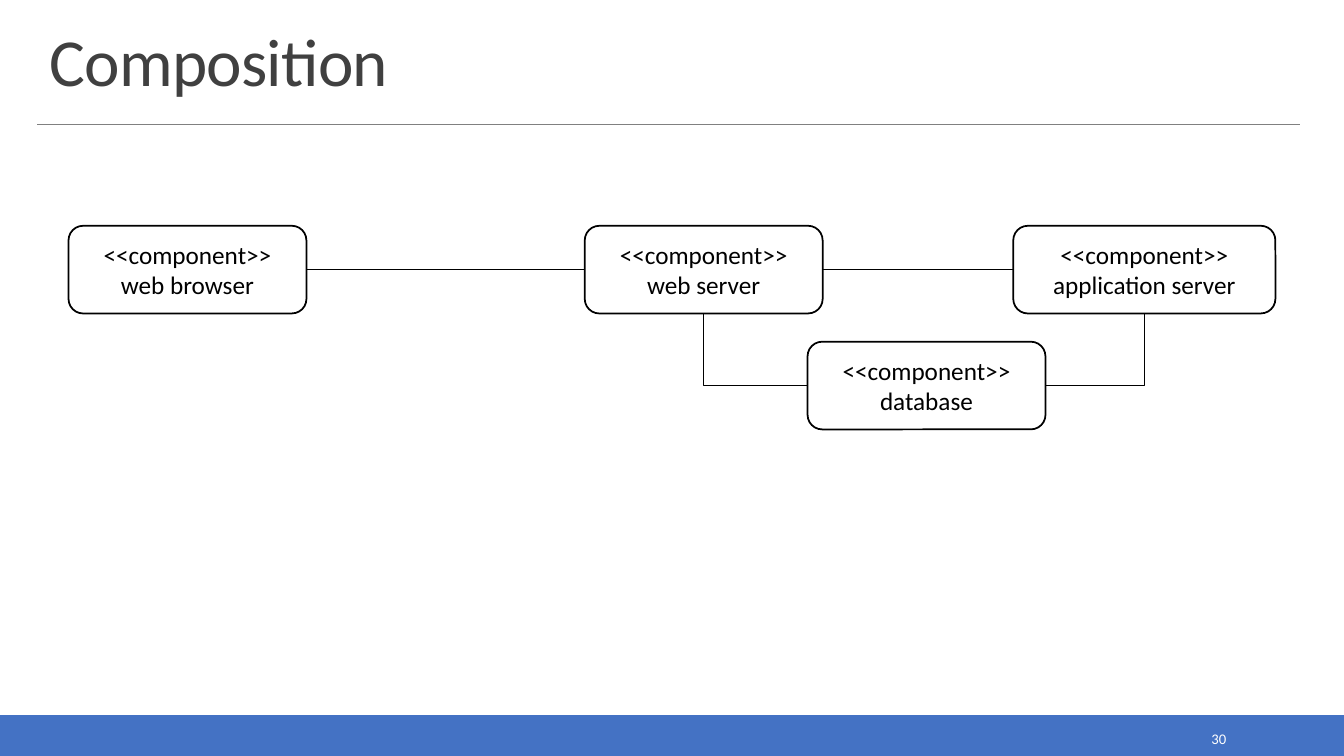
from pptx import Presentation
from pptx.dml.color import RGBColor
from pptx.enum.shapes import MSO_CONNECTOR as CONN, MSO_SHAPE as SHAPE
from pptx.enum.text import MSO_ANCHOR as ANCHOR, PP_ALIGN as ALIGN
from pptx.oxml.ns import qn
from pptx.oxml.xmlchemy import OxmlElement
from pptx.util import Inches, Pt

TOP, LEFT, BOTTOM, RIGHT = range(4)


def rgb(value):
    """Return the colour of a hex string."""
    return RGBColor.from_string(value)


def write(tf, lines, size, color, align, anchor):
    """Fill a text frame with one paragraph per line."""
    tf.word_wrap = True
    tf.vertical_anchor = anchor
    for i, line in enumerate(lines):
        p = tf.paragraphs[0] if i == 0 else tf.add_paragraph()
        p.text = line
        p.alignment = align
        p.font.name = "Calibri"
        p.font.size = Pt(size)
        p.font.color.rgb = rgb(color)


def add_label(s, box, text, size, color, align, anchor):
    """Add a one-line text box and return its paragraph."""
    tf = s.shapes.add_textbox(*map(Inches, box)).text_frame
    write(tf, [text], size, color, align, anchor)
    return tf.paragraphs[0]


def add_bar(s, box, color):
    """Add a filled rectangle."""
    sp = s.shapes.add_shape(SHAPE.RECTANGLE, *map(Inches, box))
    sp.shadow.inherit = False
    sp.fill.solid()
    sp.fill.fore_color.rgb = rgb(color)
    sp.line.color.rgb = rgb(color)
    sp.line.width = Pt(1.25)


def add_component(s, name, left, top, width=2.36):
    """Add a rounded component box."""
    sp = s.shapes.add_shape(SHAPE.ROUNDED_RECTANGLE,
                            *map(Inches, (left, top, width, 0.87)))
    sp.shadow.inherit = False
    sp.fill.background()
    sp.line.color.rgb = rgb("000000")
    sp.line.width = Pt(1.25)
    write(sp.text_frame, ["<<component>>", name], 18, "000000",
          ALIGN.CENTER, ANCHOR.MIDDLE)
    return sp


def add_line(s, start, end, color, width):
    """Add a straight connector between two points."""
    c = s.shapes.add_connector(CONN.STRAIGHT, *map(Inches, start + end))
    c.line.color.rgb = rgb(color)
    c.line.width = Pt(width)
    c._element.spPr.append(OxmlElement("a:effectLst"))
    return c


def link(s, a, a_side, b, b_side, bent=False):
    """Connect the sides of two components, with one corner if bent."""
    c = add_line(s, (0, 0), (0, 0), "000000", 1)
    c.begin_connect(a, a_side)
    c.end_connect(b, b_side)
    if bent:
        geom = c._element.spPr.find(qn("a:prstGeom"))
        geom.set("prst", "bentConnector2")


def main():
    """Build the slide and save it."""
    prs = Presentation()
    prs.slide_width, prs.slide_height = Inches(13.33), Inches(7.5)
    s = prs.slides.add_slide(prs.slide_layouts[6])

    add_bar(s, (0, 7.1, 13.33, 0.4), "4472C4")
    add_line(s, (0.37, 1.23), (12.89, 1.23), "808080", 0.5)
    title = add_label(s, (0.39, 0.2, 12.52, 0.84), "Composition", 48,
                      "404040", ALIGN.LEFT, ANCHOR.BOTTOM)
    title.line_spacing = 0.85
    title.runs[0].font._element.set("spc", "-50")
    add_label(s, (10.83, 7.19, 1.43, 0.28), "30", 10.5, "FFFFFF",
              ALIGN.RIGHT, ANCHOR.MIDDLE)

    browser = add_component(s, "web browser", 0.68, 2.24)
    web = add_component(s, "web server", 5.8, 2.24)
    app = add_component(s, "application server", 10.05, 2.24, 2.6)
    database = add_component(s, "database", 8.01, 3.39)

    link(s, browser, RIGHT, web, LEFT)
    link(s, web, RIGHT, app, LEFT)
    link(s, database, LEFT, web, BOTTOM, bent=True)
    link(s, database, RIGHT, app, BOTTOM, bent=True)

    prs.save("out.pptx")


if __name__ == "__main__":
    main()
